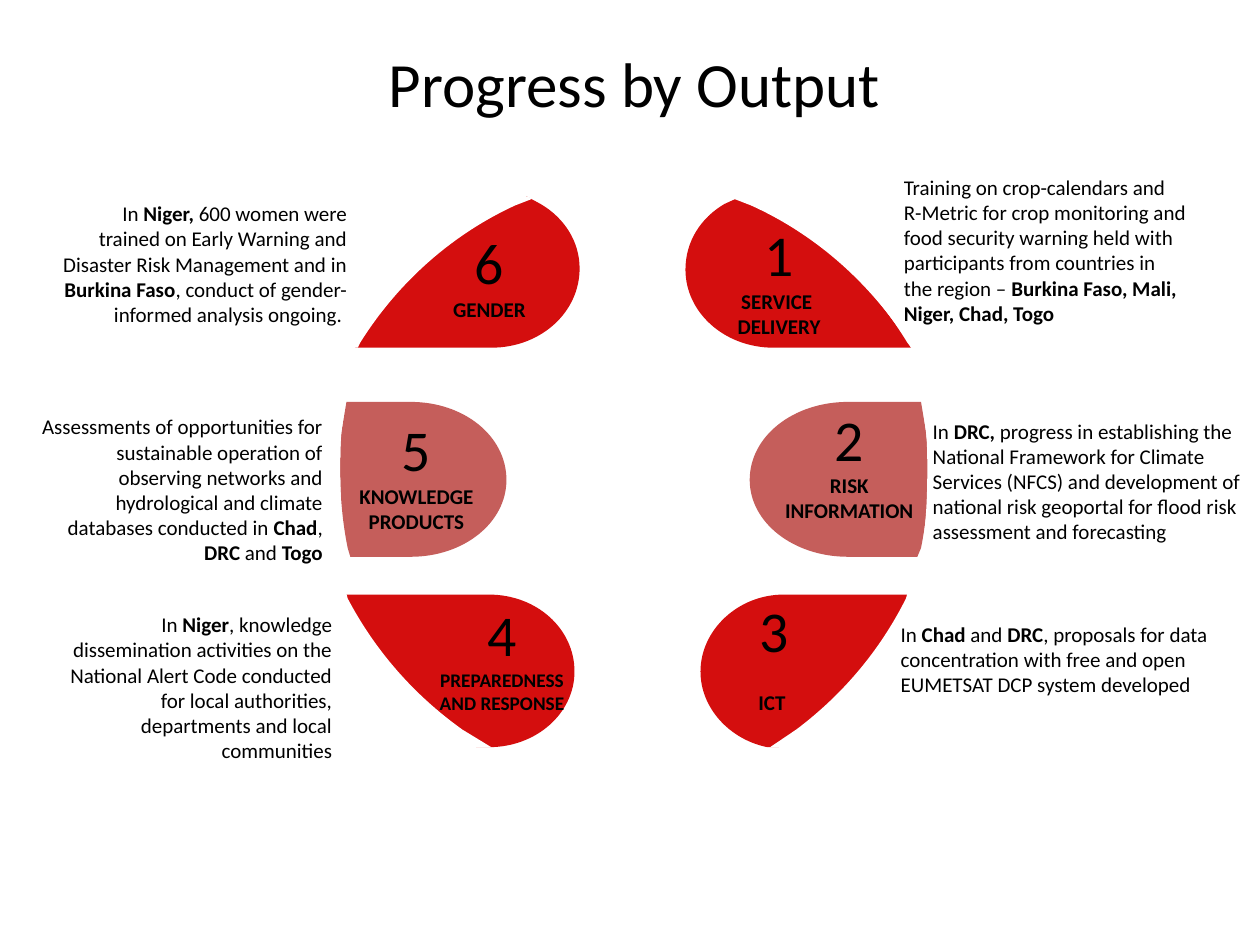
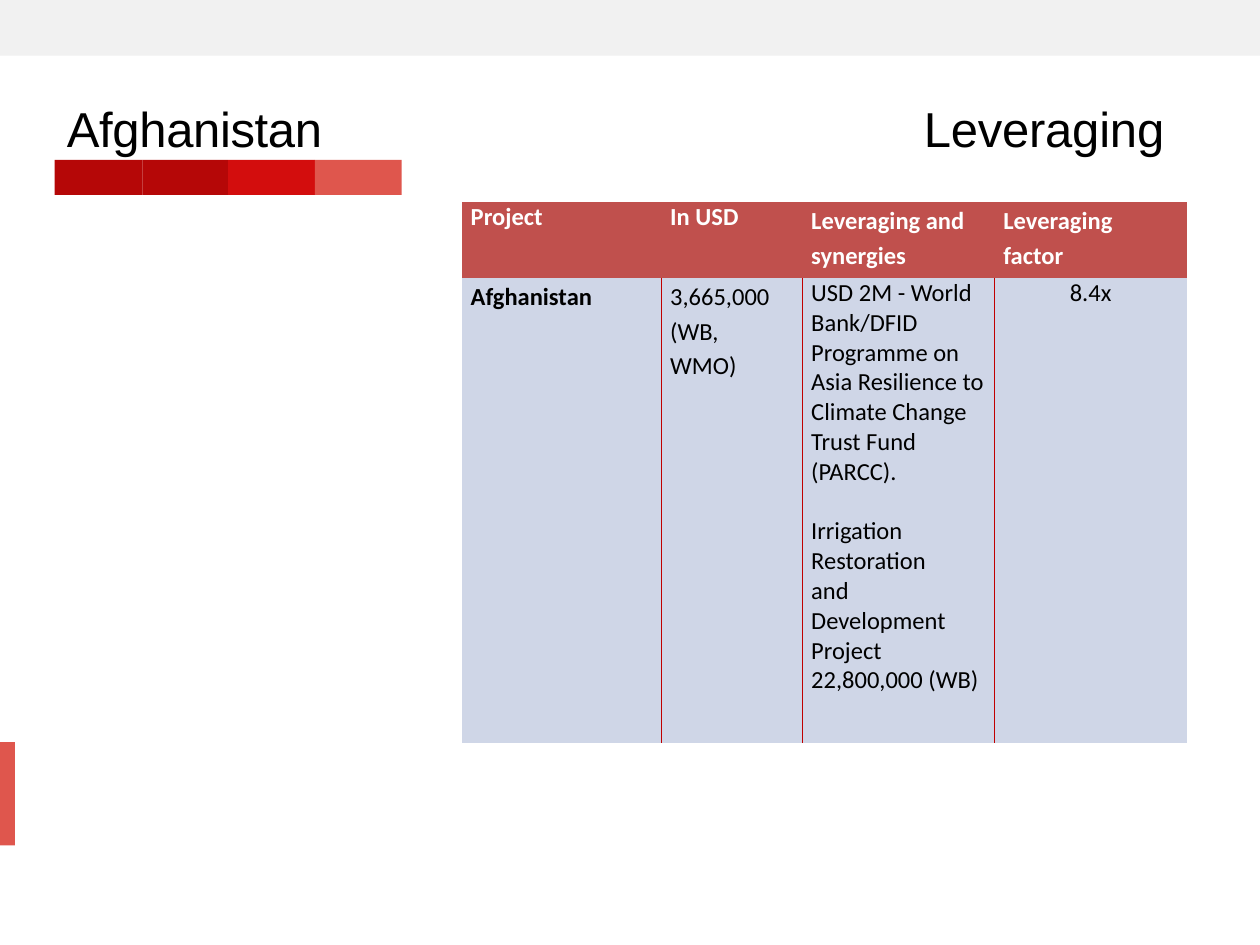
from lxml import etree
from pptx import Presentation
from pptx.dml.color import RGBColor
from pptx.enum.shapes import MSO_SHAPE
from pptx.enum.text import PP_ALIGN
from pptx.oxml.ns import qn
from pptx.util import Pt

RECTANGLE = MSO_SHAPE.RECTANGLE
LEFT, CENTER, RIGHT = PP_ALIGN.LEFT, PP_ALIGN.CENTER, PP_ALIGN.RIGHT

COLORS = {
    "black": "000000", "white": "FFFFFF", "red": "D40E0E", "rose": "C55E5B",
    "band": "F1F1F1", "dark": "B50707", "bright": "D30D0D", "coral": "DF564D",
    "header": "C0504D", "body": "CFD6E7", "border": "C00000",
}
PLAIN_TABLE_STYLE = "{2D5ABB26-0587-4C30-8999-92F81FD0307C}"
BODY_SIZE = 12
NUMBER_SIZE = 33
TABLE_SIZE = 14
BOX_MARGINS = (7.2, 3.6, 7.2, 3.6)

PETALS = [
    ("red", [(301, 112.3), (308.9, 116.6), (322.6, 124.6, 331.2, 138.2, 331.2, 153.4),
             (331.2, 178.6, 308.9, 198.7, 280.8, 198.7), (203, 198.7), (204.5, 195.8),
             (226.1, 160.6, 255.6, 133.2, 291.6, 116.6)]),
    ("red", [(421.9, 113), (431.3, 116.6), (466.6, 133.2, 497.5, 161.3, 518.4, 195.8),
             (520.6, 198.7), (442.1, 198.7), (414, 198.7, 391.7, 178.6, 391.7, 154.1),
             (391.7, 138.2, 400.3, 124.6, 414, 116.6)]),
    ("rose", [(198, 229.7), (234.7, 229.7), (265, 229.7, 289.4, 249.1, 289.4, 274.3),
              (289.4, 298.8, 265, 318.2, 234.7, 318.2), (200.2, 318.2), (198.7, 313.2),
              (195.8, 298.8, 194.4, 284.4, 194.4, 269.3),
              (194.4, 261.4, 194.4, 254.2, 195.1, 247)]),
    ("rose", [(484.6, 229.7), (526.3, 229.7), (529.2, 247),
              (529.9, 254.2, 530.6, 261.4, 530.6, 269.3),
              (530.6, 284.4, 529.2, 298.8, 526.3, 313.2), (524.2, 318.2), (484.6, 318.2),
              (453.6, 318.2, 428.4, 298.8, 428.4, 274.3),
              (428.4, 249.1, 453.6, 229.7, 484.6, 229.7)]),
    ("red", [(194.4, 339.8), (279.4, 339.8), (306.7, 339.8, 328.3, 359.3, 328.3, 383.8),
             (328.3, 407.5, 306.7, 427, 279.4, 427), (272.2, 427), (257, 416.9),
             (231.1, 397.4, 209.5, 372.2, 195.1, 342)]),
    ("red", [(447.8, 339.8), (520.6, 339.8), (519.8, 342),
             (504.7, 372.2, 484.6, 398.2, 459.4, 416.9), (445, 427), (438.5, 427),
             (416.9, 422.6, 400.3, 404.6, 400.3, 383.8),
             (400.3, 360, 421.9, 339.8, 447.8, 339.8)]),
]
PANELS = [
    ("white", [(69.1, 110.2), (283.7, 110.2), (290.2, 110.2, 297.4, 110.9, 303.1, 113),
               (303.8, 113.8), (294.5, 117.4), (258.5, 133.9, 227.5, 161.3, 205.9, 195.8),
               (204.5, 198.7), (69.1, 198.7), (41, 198.7, 18, 178.6, 18, 154.1),
               (18, 129.6, 41, 110.2, 69.1, 110.2)]),
    ("white", [(440.6, 110.2), (660.2, 110.2), (688.3, 110.2, 712.1, 129.6, 712.1, 154.1),
               (712.1, 179.3, 688.3, 198.7, 660.2, 198.7), (520.6, 198.7), (519.1, 195.8),
               (496.8, 161.3, 465.8, 133.9, 429.1, 117.4), (419.8, 113.8), (420.5, 113),
               (426.2, 110.9, 433.4, 110.2, 440.6, 110.2)]),
    ("white", [(47.5, 229.7), (197.3, 229.7), (195.1, 247),
               (194.4, 254.2, 194.4, 261.4, 194.4, 269.3),
               (194.4, 284.4, 195.1, 298.8, 197.3, 313.2), (198.7, 318.2), (47.5, 318.2),
               (23, 318.2, 5.8, 298.8, 5.8, 274.3), (5.8, 249.1, 23, 229.7, 47.5, 229.7)]),
    ("white", [(527, 229.7), (670.3, 229.7), (693.4, 229.7, 712.1, 249.1, 712.1, 274.3),
               (712.1, 298.8, 693.4, 318.2, 670.3, 318.2), (525.6, 318.2), (527, 313.2),
               (529.2, 298.8, 529.9, 284.4, 529.9, 269.3),
               (529.9, 261.4, 529.9, 254.2, 529.2, 247)]),
    ("white", [(69.8, 339.5), (198, 339.5), (198.7, 342),
               (214.6, 372.2, 236.9, 397.4, 264.2, 416.9), (280.8, 427), (69.8, 427),
               (41, 427, 18, 407.5, 18, 383.8), (18, 359.3, 41, 339.5, 69.8, 339.5)]),
    ("white", [(518.4, 339.5), (652.3, 339.5), (679.7, 339.5, 702, 359.3, 702, 383.8),
               (702, 407.5, 679.7, 427, 652.3, 427), (440, 427), (455, 416.9),
               (481, 397.4, 502.6, 372.2, 517.7, 342)]),
]
LABELS = [
    ("6", "GENDER", (228.6, 126.2, 102.2, 72.7), BODY_SIZE, 0),
    ("5", "KNOWLEDGE PRODUCTS", (180, 233, 115.9, 47.5), BODY_SIZE, 0),
    ("3", "ICT ", (384.5, 336.2, 115.9, 47.5), BODY_SIZE, 14.6),
    ("2", "RISK INFORMATION", (435.6, 227, 99.4, 47.5), BODY_SIZE, 0),
    ("1", "SERVICE \nDELIVERY", (382.6, 121.5, 125.3, 47.5), BODY_SIZE, 0),
    ("4", "PREPAREDNESS AND RESPONSE", (237.2, 338.6, 99.4, 47.5), 11, 0),
]
NOTES = [
    ("Training on crop-calendars and R-Metric for crop monitoring and food security warning "
     "held with participants from countries in the region – "
     "**Burkina Faso, Mali, Niger, Chad, Togo **", (509.4, 96.1, 175.7, 100.8), LEFT),
    ("In **Niger**, knowledge dissemination activities on the National Alert Code conducted "
     "for local authorities, departments and local communities",
     (29.9, 346, 167, 81.4), RIGHT),
    ("In **Niger, **600 women were trained on Early Warning and Disaster Risk Management "
     "and in **Burkina Faso**, conduct of gender-informed analysis ongoing. ",
     (26.1, 111.2, 179.3, 85.7), RIGHT),
    ("In **Chad** and **DRC**, proposals for data concentration with free and open "
     "EUMETSAT DCP system developed", (507.6, 351.4, 204.5, 80.6), LEFT),
    ("In **DRC, **progress in establishing the National Framework for Climate Services (NFCS) "
     "and development of national risk geoportal for flood risk assessment and forecasting",
     (525.9, 235.4, 193, 88.6), LEFT),
    ("Assessments of opportunities for sustainable operation of observing networks and "
     "hydrological and climate databases conducted in **Chad**, **DRC** and **Togo**",
     (11.5, 233, 180, 84.2), RIGHT),
]

BARS = [
    ("band", (0, 0, 720, 31.8)),
    ("coral", (0, 424.1, 8.5, 59)),
    ("dark", (31.2, 91.4, 50.2, 20)),
    ("dark", (81.4, 91.4, 48.9, 20)),
    ("bright", (130.3, 91.4, 49.7, 20)),
    ("coral", (180, 91.4, 49.6, 20)),
]
HEADINGS = [
    ("Afghanistan", (37.4, 56.2, 163.4, 33.8), (0.9, 0, 0, 0), -20),
    ("Leveraging", (130.3, 51.8, 552.2, 38.2), (397.6, 4.3, 0, 0), -10),
]
TABLE_ORIGIN = (264, 115.5)
COLUMN_WIDTHS = (114, 80.6, 109.8, 109.8)
ROW_HEIGHTS = (43.4, 265.6)
RIGHT_MARGINS = (5, 9, 5, 5)
TABLE = [
    [(["**Project**"], 1), (["**In USD**"], 1),
     (["**Leveraging and synergies**"], 1.15), (["**Leveraging factor**"], 1.15)],
    [(["**Afghanistan**"], 1.15), (["3,665,000 (WB, WMO)"], 1.15),
     (["USD 2M - World Bank/DFID Programme on Asia Resilience to Climate Change "
       "Trust Fund (PARCC).", "Irrigation Restoration ",
       "and Development Project 22,800,000 (WB)"], 1), (["8.4x"], 1)],
]


def color(name):
    return RGBColor.from_string(COLORS[name])


def set_all(target, values):
    for name, value in values.items():
        setattr(target, name, value)


def fill_shape(shape, color_name):
    shape.fill.solid()
    shape.fill.fore_color.rgb = color(color_name)
    shape.line.fill.background()
    shape.shadow.inherit = False


def write(paragraph, text, size, font="Calibri", color_name="black", spacing=0, **formats):
    set_all(paragraph, formats)
    for index, part in enumerate(text.split("**")):
        for line_index, line in enumerate(part.split("\n")):
            if line_index:
                paragraph.add_line_break()
            if line:
                run = paragraph.add_run()
                run.text = line
                set_all(run.font, {"name": font, "size": Pt(size), "bold": index % 2 == 1})
                run.font.color.rgb = color(color_name)
                if spacing:
                    run._r.get_or_add_rPr().set("spc", str(spacing))


def add_text_box(slide, box, margins=BOX_MARGINS):
    frame = slide.shapes.add_textbox(*map(Pt, box)).text_frame
    sides = ("margin_left", "margin_top", "margin_right", "margin_bottom")
    set_all(frame, {"word_wrap": True, **dict(zip(sides, map(Pt, margins)))})
    return frame


def add_outline(slide, color_name, outline):
    ends = [(Pt(segment[-2]), Pt(segment[-1])) for segment in outline]
    builder = slide.shapes.build_freeform(*ends[0])
    builder.add_line_segments(ends[1:], close=True)
    shape = builder.convert_to_shape()
    lines = list(shape._element.iter(qn("a:lnTo")))
    for line, segment in zip(lines, outline[1:]):
        if len(segment) == 6:
            curve = etree.Element(qn("a:cubicBezTo"))
            for x, y in zip(segment[::2], segment[1::2]):
                etree.SubElement(curve, qn("a:pt"), x=str(Pt(x) - shape.left),
                                 y=str(Pt(y) - shape.top))
            line.getparent().replace(line, curve)
    fill_shape(shape, color_name)


def add_border(cell, side):
    properties = cell._tc.get_or_add_tcPr()
    line = etree.Element(qn("a:" + side), w=str(Pt(1)))
    fill = etree.SubElement(line, qn("a:solidFill"))
    etree.SubElement(fill, qn("a:srgbClr"), val=COLORS["border"])
    properties.insert(len(properties.findall(qn("a:lnL"))), line)


def build_outputs(slide):
    for color_name, outline in PETALS + PANELS:
        add_outline(slide, color_name, outline)
    for number, label, box, size, gap in LABELS:
        frame = add_text_box(slide, box)
        write(frame.paragraphs[0], number, NUMBER_SIZE, alignment=CENTER)
        write(frame.add_paragraph(), f"**{label}**", size,
              alignment=CENTER, space_before=Pt(gap))
    for text, box, alignment in NOTES:
        write(add_text_box(slide, box).paragraphs[0], text, BODY_SIZE, alignment=alignment)
    title = add_text_box(slide, (5.5, 21.6, 714.2, 90))
    write(title.paragraphs[0], "Progress by Output", 36, alignment=CENTER)


def build_table(slide):
    frame = slide.shapes.add_table(
        len(ROW_HEIGHTS), len(COLUMN_WIDTHS), *map(Pt, TABLE_ORIGIN),
        Pt(sum(COLUMN_WIDTHS)), Pt(sum(ROW_HEIGHTS)))
    table = frame.table
    set_all(table, {"first_row": False, "horz_banding": False})
    next(frame._element.iter(qn("a:tableStyleId"))).text = PLAIN_TABLE_STYLE
    for column, width in zip(table.columns, COLUMN_WIDTHS):
        column.width = Pt(width)
    for row, height in zip(table.rows, ROW_HEIGHTS):
        row.height = Pt(height)
    last = len(COLUMN_WIDTHS) - 1
    for row_index, cells in enumerate(TABLE):
        for column_index, (texts, spacing) in enumerate(cells):
            cell = table.cell(row_index, column_index)
            set_all(cell, {"margin_left": Pt(5), "margin_top": 0, "margin_bottom": 0,
                           "margin_right": Pt(RIGHT_MARGINS[column_index])})
            cell.fill.solid()
            cell.fill.fore_color.rgb = color("body" if row_index else "header")
            centered = row_index and column_index == last
            for index, text in enumerate(texts):
                text_frame = cell.text_frame
                paragraph = text_frame.add_paragraph() if index else text_frame.paragraphs[0]
                write(paragraph, text, TABLE_SIZE,
                      color_name="black" if row_index else "white",
                      alignment=CENTER if centered else LEFT, line_spacing=spacing,
                      space_before=Pt(17 if index == 1 else 0))
            if row_index and column_index > 0:
                add_border(cell, "lnL")
            if row_index and column_index < last:
                add_border(cell, "lnR")


def build_leveraging(slide):
    for color_name, box in BARS:
        fill_shape(slide.shapes.add_shape(RECTANGLE, *map(Pt, box)), color_name)
    for text, box, margins, spacing in HEADINGS:
        write(add_text_box(slide, box, margins).paragraphs[0], text, 28,
              font="Arial", spacing=spacing)
    build_table(slide)


presentation = Presentation()
set_all(presentation, {"slide_width": Pt(720), "slide_height": Pt(540)})
for build in (build_outputs, build_leveraging):
    build(presentation.slides.add_slide(presentation.slide_layouts[6]))
presentation.save("out.pptx")
